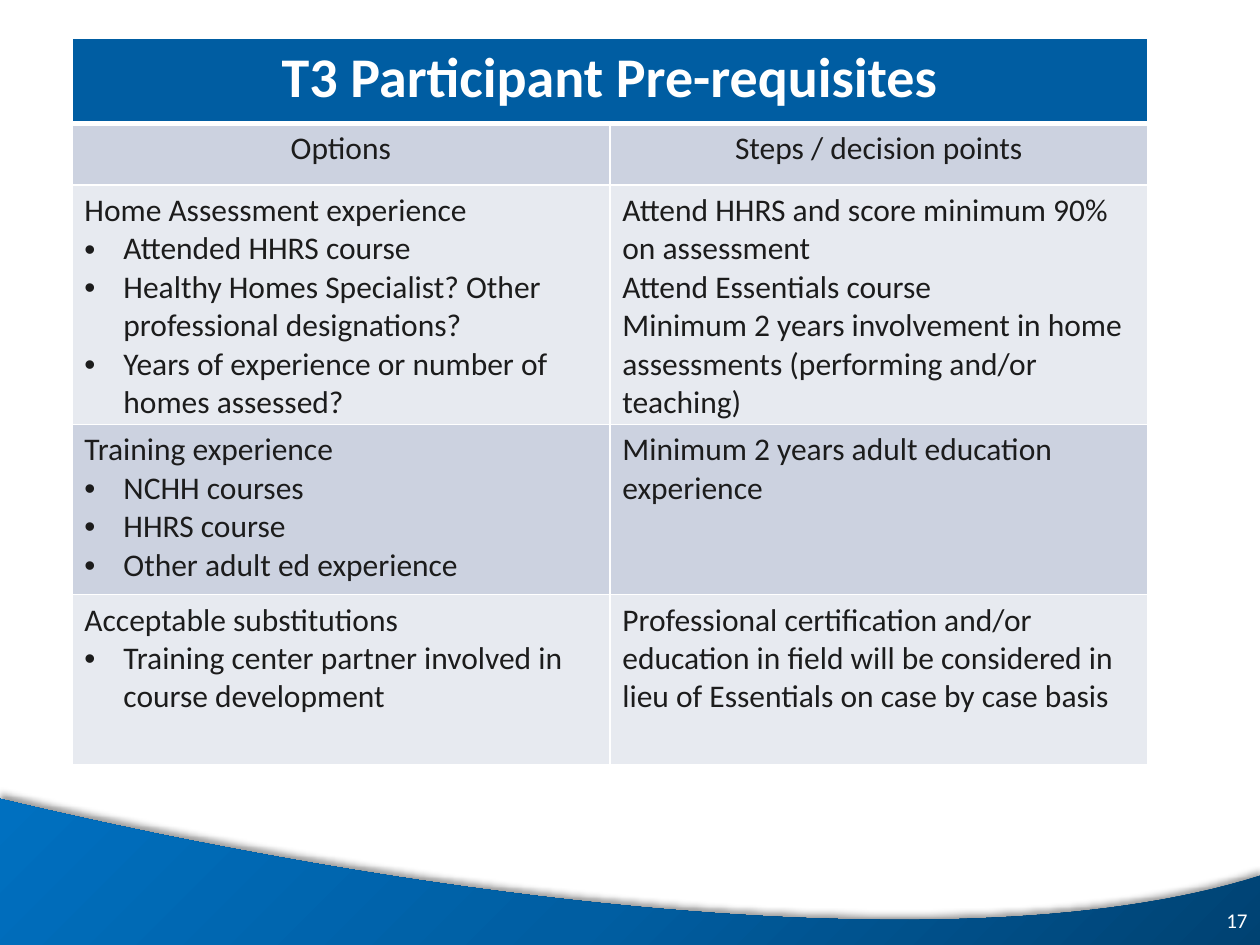
from dataclasses import dataclass

from lxml import etree
from pptx import Presentation
from pptx.dml.color import RGBColor
from pptx.enum.text import MSO_ANCHOR, PP_ALIGN
from pptx.oxml import parse_xml
from pptx.oxml.ns import nsdecls, qn
from pptx.util import Inches, Pt

LEFT, CENTER, RIGHT = PP_ALIGN.LEFT, PP_ALIGN.CENTER, PP_ALIGN.RIGHT
MIDDLE = MSO_ANCHOR.MIDDLE


@dataclass(frozen=True)
class Theme:
    font: str = "Calibri"
    head: str = "005DA2"
    dark: str = "CCD2E0"
    light: str = "E7EAF0"
    ink: str = "1C1C1C"
    white: str = "FFFFFF"
    wave: tuple = ("004272", "005EA2", "0070C0")
    shade: str = "000000"
    title: int = 32
    body: int = 18
    page: int = 12


theme = Theme()


def write(frame, text, size=theme.body, color=theme.ink, bold=False, align=LEFT):
    """Write one paragraph per line; lines that start with • become bullets."""
    for i, line in enumerate(text.split("\n")):
        para = frame.add_paragraph() if i else frame.paragraphs[0]
        para.alignment = align
        if line.startswith("•"):
            props = para._p.get_or_add_pPr()
            props.set("marL", str(Inches(0.31)))
            props.set("indent", str(-Inches(0.31)))
            etree.SubElement(props, qn("a:buFont"), typeface="Arial")
            etree.SubElement(props, qn("a:buChar"), char="•")
        run = para.add_run()
        run.text = line.lstrip("•")
        font = run.font
        font.name, font.size, font.bold = theme.font, Pt(size), bold
        font.color.rgb = RGBColor.from_string(color)


def paint(cell, color, base=1):
    """Fill a cell and give it white borders, base points wide at the bottom."""
    cell.fill.solid()
    cell.fill.fore_color.rgb = RGBColor.from_string(color)
    props = cell._tc.get_or_add_tcPr()
    for i, (side, width) in enumerate(zip("LRTB", (1, 1, 1, base))):
        props.insert(i, parse_xml(
            f'<a:ln{side} {nsdecls("a")} w="{Pt(width)}"><a:solidFill>'
            f'<a:srgbClr val="{theme.white}"/></a:solidFill></a:ln{side}>'))


prs = Presentation()
prs.slide_width, prs.slide_height = Inches(10), Inches(7.5)
slide = prs.slides.add_slide(prs.slide_layouts[6])
shapes = slide.shapes

# Wave along the foot, traced as a cubic curve
curve = [(0, 6.34), (3.22, 7.11), (7.62, 7.71), (10, 6.95)]
steps = 60
points = []
for n in range(steps + 1):
    t = n / steps
    parts = ((1 - t) ** 3, 3 * t * (1 - t) ** 2, 3 * t * t * (1 - t), t ** 3)
    points.append([Inches(sum(w * p[k] for w, p in zip(parts, curve)))
                   for k in (0, 1)])
points += [(Inches(x), Inches(y)) for x, y in ((10.04, 7.51), (0, 7.51))]
build = shapes.build_freeform(*points[0])
build.add_line_segments(points[1:], close=True)
wave = build.convert_to_shape()
wave.line.fill.background()
wave.shadow.inherit = False

# Wave gradient and soft shadow above its edge
stops = "".join(f'<a:gs pos="{i * 50000}"><a:srgbClr val="{c}"/></a:gs>'
                for i, c in enumerate(theme.wave))
props = wave._element.spPr
props.find(qn("a:custGeom")).addnext(parse_xml(
    f'<a:gradFill {nsdecls("a")} rotWithShape="1"><a:gsLst>{stops}</a:gsLst>'
    '<a:lin ang="13500000" scaled="1"/></a:gradFill>'))
props.find(qn("a:effectLst")).append(parse_xml(
    f'<a:outerShdw {nsdecls("a")} blurRad="{Pt(4)}" dist="{Pt(3)}" '
    f'dir="16200000" algn="b" rotWithShape="0"><a:srgbClr val="{theme.shade}">'
    '<a:alpha val="40000"/></a:srgbClr></a:outerShdw>'))

# Page number
page = shapes.add_textbox(Inches(9.47), Inches(7.1), Inches(0.53), Inches(0.4))
page.text_frame.word_wrap = True
page.text_frame.vertical_anchor = MIDDLE
write(page.text_frame, "17", size=theme.page, color=theme.white, align=RIGHT)

# Table of prerequisites
rows = [
    ("Options", "Steps / decision points"),
    ("Home Assessment experience\n•Attended HHRS course\n"
     "•Healthy Homes Specialist? Other professional designations?\n"
     "•Years of experience or number of homes assessed?",
     "Attend HHRS and score minimum 90% on assessment\n"
     "Attend Essentials course\n"
     "Minimum 2 years involvement in home assessments "
     "(performing and/or teaching)"),
    ("Training experience\n•NCHH courses\n•HHRS course\n"
     "•Other adult ed experience",
     "Minimum 2 years adult education experience"),
    ("Acceptable substitutions\n"
     "•Training center partner involved in course development",
     "Professional certification and/or education in field will be "
     "considered in lieu of Essentials on case by case basis"),
]
highs = [0.68, 0.49, 1.35, 1.35, 1.35]
table = shapes.add_table(len(highs), 2, Inches(0.57), Inches(0.3),
                         Inches(8.54), Inches(sum(highs))).table
table.horz_banding = False
for row, high in zip(table.rows, highs):
    row.height = Inches(high)

# Title row across both columns
for cell in table.rows[0].cells:
    paint(cell, theme.head, base=3)
title = table.cell(0, 0)
title.merge(table.cell(0, 1))
write(title.text_frame, "T3 Participant Pre-requisites", size=theme.title,
      color=theme.white, bold=True, align=CENTER)

# Body rows in alternating tints
for r, texts in enumerate(rows, 1):
    for c, text in enumerate(texts):
        cell = table.cell(r, c)
        paint(cell, theme.dark if r % 2 else theme.light)
        write(cell.text_frame, text, align=CENTER if r == 1 else LEFT)

prs.save("out.pptx")
